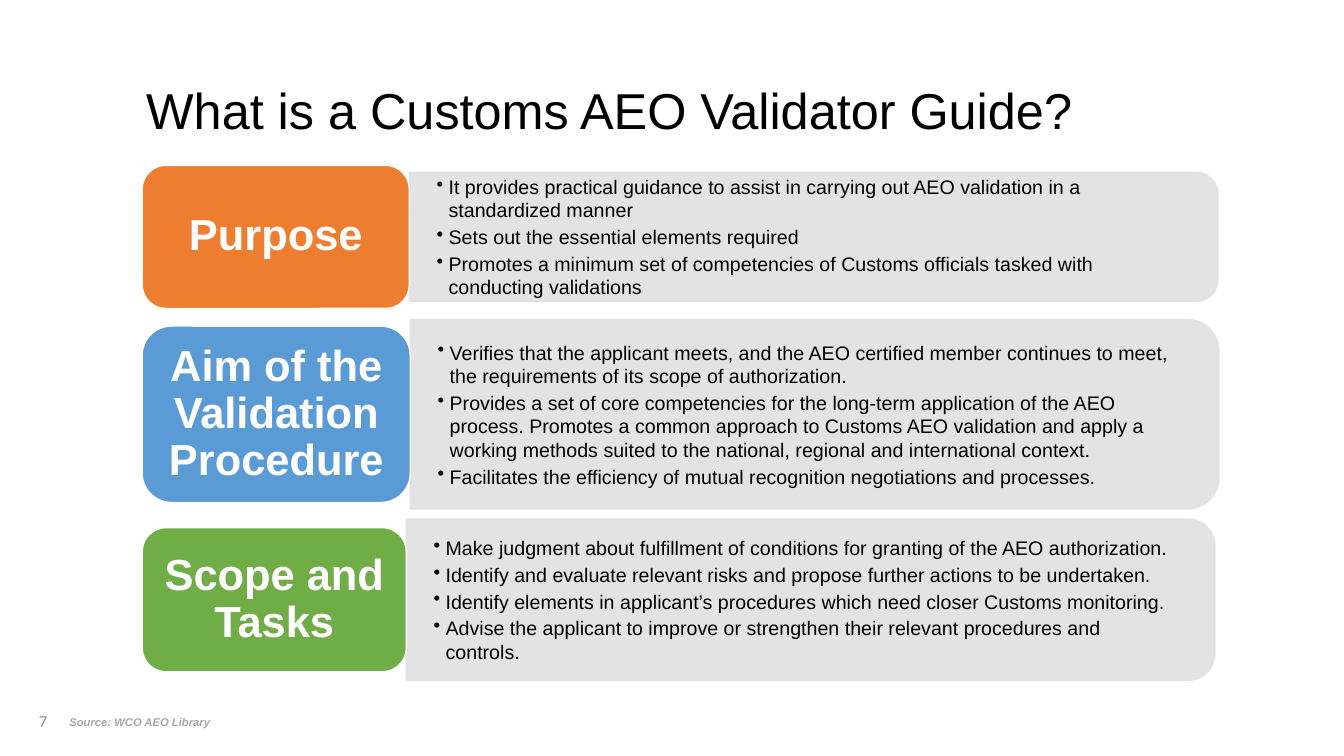
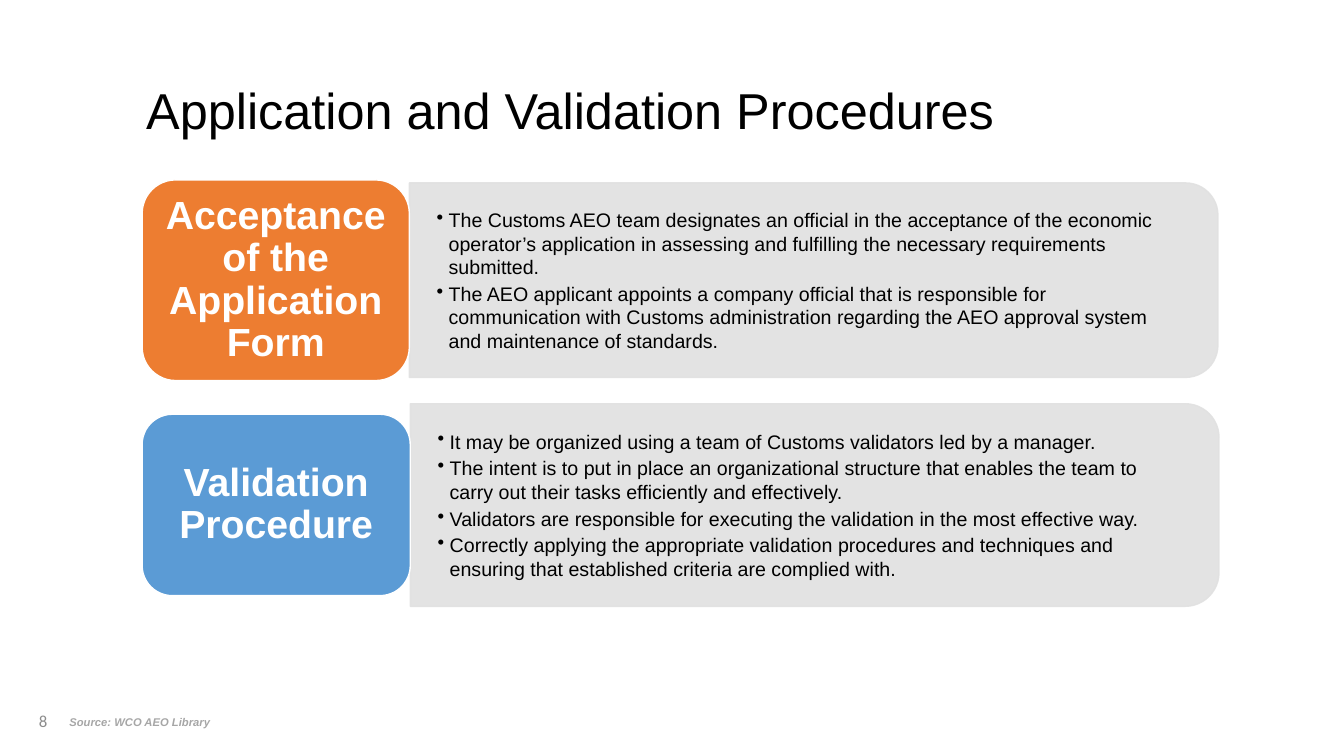
from lxml.etree import SubElement
from pptx import Presentation
from pptx.dml.color import RGBColor
from pptx.enum.shapes import MSO_SHAPE as Shape
from pptx.enum.text import MSO_ANCHOR as Anchor, MSO_AUTO_SIZE as AutoSize, PP_ALIGN as Align
from pptx.oxml.ns import qn
from pptx.util import Inches, Pt

COLORS = {
    "title": "000000",
    "body": "000000",
    "card_text": "FFFFFF",
    "panel": "E1E1E1",
    "orange": "ED7D31",
    "blue": "5B9BD5",
    "green": "70AD47",
    "number": "8C8C8C",
    "source": "A6A6A6",
}
LEFT = 1.41
PANEL_WIDTH = 8.02
SOURCE = "Source: WCO AEO Library"

# Each row: label, card colour, vertical centre, card width, card height, panel height, bullets
SLIDES = [
    {
        "number": 7,
        "title": "What is a Customs AEO Validator Guide?",
        "label_size": 31,
        "rows": [
            ("Purpose", "orange", 2.35, 2.65, 1.42, 1.28, [
                "It provides practical guidance to assist in carrying out AEO validation in a "
                "standardized manner",
                "Sets out the essential elements required",
                "Promotes a minimum set of competencies of Customs officials tasked with "
                "conducting validations",
            ]),
            ("Aim of the Validation Procedure", "blue", 4.11, 2.66, 1.75, 1.88, [
                "Verifies that the applicant meets, and the AEO certified member continues to "
                "meet, the requirements of its scope of authorization.",
                "Provides a set of core competencies for the long-term application of the AEO "
                "process. Promotes a common approach to Customs AEO validation and apply a "
                "working methods suited to the national, regional and international context.",
                "Facilitates the efficiency of mutual recognition negotiations and processes.",
            ]),
            ("Scope and Tasks", "green", 5.95, 2.62, 1.43, 1.6, [
                "Make judgment about fulfillment of conditions for granting of the AEO "
                "authorization.",
                "Identify and evaluate relevant risks and propose further actions to be "
                "undertaken.",
                "Identify elements in applicant’s procedures which need closer Customs "
                "monitoring.",
                "Advise the applicant to improve or strengthen their relevant procedures and "
                "controls.",
            ]),
        ],
    },
    {
        "number": 8,
        "title": "Application and Validation Procedures",
        "label_size": 28,
        "rows": [
            ("Acceptance of the Application Form", "orange", 2.78, 2.65, 1.99, 1.93, [
                "The Customs AEO team designates an official in the acceptance of the economic "
                "operator’s application in assessing and fulfilling the necessary requirements "
                "submitted.",
                "The AEO applicant appoints a company official that is responsible for "
                "communication with Customs administration regarding the AEO approval system "
                "and maintenance of standards.",
            ]),
            ("Validation Procedure", "blue", 5.01, 2.66, 1.8, 2.01, [
                "It may be organized using a team of Customs validators led by a manager.",
                "The intent is to put in place an organizational structure that enables the "
                "team to carry out their tasks efficiently and effectively.",
                "Validators are responsible for executing the validation in the most effective "
                "way.",
                "Correctly applying the appropriate validation procedures and techniques and "
                "ensuring that established criteria are complied with.",
            ]),
        ],
    },
]


class Deck:
    def __init__(self):
        self.prs = Presentation()
        self.prs.slide_width = Inches(13.33)
        self.prs.slide_height = Inches(7.5)
        self.slide = None

    def new_slide(self, title):
        self.slide = self.prs.slides.add_slide(self.prs.slide_layouts[5])
        sp = self.slide.shapes.title
        sp.left, sp.top = Inches(1.35), Inches(0.4)
        sp.width, sp.height = Inches(9.81), Inches(1.45)
        p = self.frame(sp).paragraphs[0]
        p.alignment = Align.LEFT
        p.line_spacing = 0.9
        self.run(p, title, 36, "title")

    def frame(self, sp, inset_x=0.1, inset_y=0.05):
        """Prepare a shape's text frame: wrapped, middle-anchored, fixed size."""
        tf = sp.text_frame
        tf.word_wrap = True
        tf.auto_size = AutoSize.NONE
        tf.vertical_anchor = Anchor.MIDDLE
        tf.margin_left = tf.margin_right = Inches(inset_x)
        tf.margin_top = tf.margin_bottom = Inches(inset_y)
        return tf

    def run(self, p, text, size, color, bold=False, italic=False, font="Arial"):
        r = p.add_run()
        r.text = text
        r.font.name = font
        r.font.size = Pt(size)
        r.font.bold = bold
        r.font.italic = italic
        r.font.color.rgb = RGBColor.from_string(COLORS[color])

    def shape(self, kind, left, top, width, height, fill, line):
        sp = self.slide.shapes.add_shape(
            kind, Inches(left), Inches(top), Inches(width), Inches(height))
        sp.shadow.inherit = False
        sp.fill.solid()
        sp.fill.fore_color.rgb = RGBColor.from_string(COLORS[fill])
        sp.line.color.rgb = RGBColor.from_string(COLORS[line])
        sp.line.width = Pt(1)
        return sp

    def text_box(self, left, top, width, height):
        return self.slide.shapes.add_textbox(
            Inches(left), Inches(top), Inches(width), Inches(height))

    def footer(self, number):
        p = self.frame(self.text_box(0.07, 6.95, 0.5, 0.4)).paragraphs[0]
        p.alignment = Align.RIGHT
        self.run(p, str(number), 12, "number", font="Calibri")
        p = self.frame(self.text_box(0.59, 7.04, 2.16, 0.24)).paragraphs[0]
        self.run(p, SOURCE, 8, "source", bold=True, italic=True)

    def panel(self, left, middle, height):
        """Draw a translucent panel whose right corners are rounded."""
        sp = self.shape(
            Shape.ROUND_2_SAME_RECTANGLE, left + (PANEL_WIDTH - height) / 2,
            middle - PANEL_WIDTH / 2, height, PANEL_WIDTH, "panel", "panel")
        sp.rotation = 90
        for color in sp._element.spPr.iter(qn("a:srgbClr")):
            SubElement(color, qn("a:alpha"), val="90000")

    def bullets(self, left, middle, panel_height, items):
        height = 0.9 * panel_height
        width = PANEL_WIDTH - 0.05 * panel_height
        sp = self.text_box(left, middle - height / 2, width, height)
        tf = self.frame(sp, 0.27, 0.14)
        for i, item in enumerate(items):
            p = tf.add_paragraph() if i else tf.paragraphs[0]
            pPr = p._p.get_or_add_pPr()
            pPr.set("marL", str(Inches(0.12)))
            pPr.set("indent", str(-Inches(0.12)))
            SubElement(pPr, qn("a:buChar"), char="•")
            p.space_after = Pt(2.3)
            self.run(p, item, 14, "body")

    def card(self, label, size, color, middle, width, height):
        sp = self.shape(Shape.ROUNDED_RECTANGLE, LEFT, middle - height / 2,
                        width, height, color, "card_text")
        p = self.frame(sp, 0.13, 0.06).paragraphs[0]
        p.alignment = Align.CENTER
        p.line_spacing = 0.9
        self.run(p, label, size, "card_text", bold=True)


def main():
    deck = Deck()
    for content in SLIDES:
        deck.new_slide(content["title"])
        deck.footer(content["number"])
        for label, color, middle, card_w, card_h, panel_h, items in content["rows"]:
            left = LEFT + card_w
            deck.panel(left, middle, panel_h)
            deck.bullets(left, middle, panel_h, items)
            deck.card(label, content["label_size"], color, middle, card_w, card_h)
    deck.prs.save("out.pptx")


if __name__ == "__main__":
    main()
